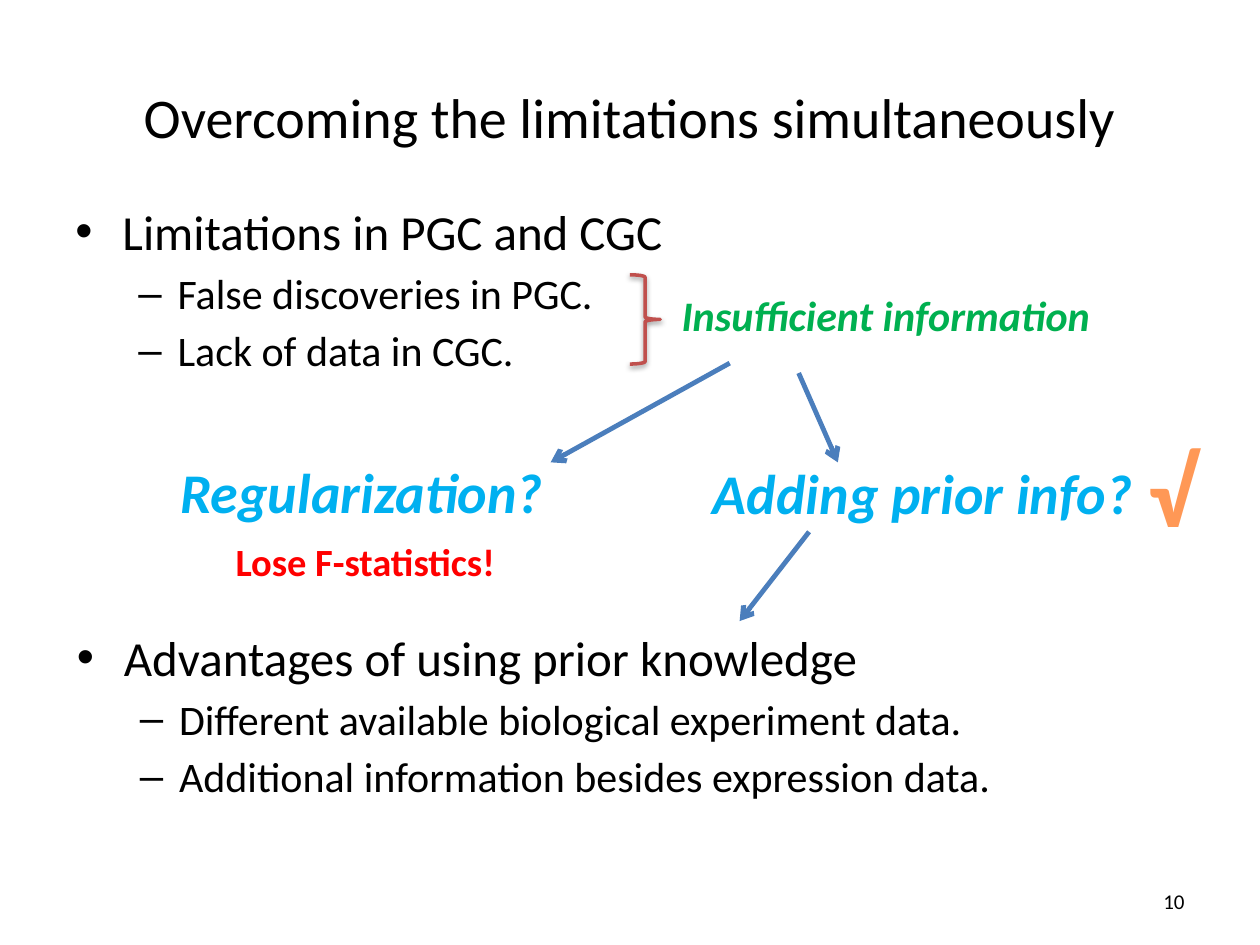
from dataclasses import dataclass

from lxml import etree
from pptx import Presentation
from pptx import util as u
from pptx.dml.color import RGBColor
from pptx.enum import shapes, text
from pptx.oxml import ns


@dataclass(frozen=True)
class Theme:
    font: str = "Calibri"
    black: str = "000000"
    green: str = "00B050"
    blue: str = "00B0F0"
    red: str = "FF0000"
    orange: str = "FF9856"
    brace: str = "C0504D"
    arrow: str = "4B7EBC"
    title: int = 32
    topic: int = 28
    point: int = 24
    warning: int = 22
    check: int = 56
    number: int = 12
    brace_width: float = 2
    arrow_width: float = 2.75


THEME = Theme()

# Boxes are left, top, width, height in centimetres.
TITLE = ("Overcoming the limitations simultaneously", (1.27, 0.76, 22.86, 3.18))
PAGE_NUMBER = ("10", (18.21, 17.65, 5.92, 1.02))

OUTLINES = [
    ((1.27, 3.94, 22.83, 4.67), "Limitations in PGC and CGC",
     ["False discoveries in PGC.", "Lack of data in CGC."]),
    ((1.3, 12.52, 22.81, 4.6), "Advantages of using prior knowledge",
     ["Different available biological experiment data.",
      "Additional information besides expression data."]),
]

# Wording, box, size, colour, italic
CALLOUTS = [
    ("Insufficient information", (13.49, 5.72, 8.84, 1.27), THEME.point, THEME.green, True),
    ("Regularization?", (3.38, 9.09, 7.9, 1.63), THEME.title, THEME.blue, True),
    ("Adding prior info?", (14.12, 9.12, 9.04, 1.63), THEME.title, THEME.blue, True),
    ("√", (22.91, 8.53, 2.39, 2.64), THEME.check, THEME.orange, False),
    ("Lose F-statistics!", (4.5, 10.72, 5.97, 1.19), THEME.warning, THEME.red, False),
]

BRACE = (12.7, 5.54, 0.61, 1.8)

ARROWS = [
    ((14.71, 7.32), (11.1, 9.32)),
    ((16.1, 7.52), (16.89, 9.32)),
    ((16.31, 10.72), (14.91, 12.52)),
]

# Bullet, left margin, hanging indent, size, space before in points
LEVELS = [
    ("•", 0.95, 0.95, THEME.topic, 5),
    ("–", 2.06, 0.79, THEME.point, 4),
]


def lengths(values):
    return [u.Cm(value) for value in values]


def add_element(parent, tag, **attributes):
    return etree.SubElement(parent, ns.qn(tag), attributes)


def add_frame(slide, box, wrap=True, anchor=text.MSO_ANCHOR.TOP):
    frame = slide.shapes.add_textbox(*lengths(box)).text_frame
    frame.word_wrap = wrap
    frame.vertical_anchor = anchor
    return frame


def add_run(paragraph, wording, size, color=THEME.black, bold=False, italic=False):
    run = paragraph.add_run()
    run.text = wording
    run.font.name = THEME.font
    run.font.size = u.Pt(size)
    run.font.bold = bold
    run.font.italic = italic
    run.font.color.rgb = RGBColor.from_string(color)


def add_line_of_text(slide, wording, box, size, alignment):
    paragraph = add_frame(slide, box, anchor=text.MSO_ANCHOR.MIDDLE).paragraphs[0]
    paragraph.alignment = alignment
    add_run(paragraph, wording, size)


def add_outline(slide, box, topic, points):
    frame = add_frame(slide, box)
    for index, wording in enumerate([topic, *points]):
        level = min(index, 1)
        bullet, margin, hanging, size, space = LEVELS[level]
        paragraph = frame.add_paragraph() if index else frame.paragraphs[0]
        paragraph.level = level
        paragraph.space_before = u.Pt(space)
        properties = paragraph._p.get_or_add_pPr()
        properties.set("marL", str(u.Cm(margin)))
        properties.set("indent", str(-u.Cm(hanging)))
        add_element(properties, "a:buFont", typeface="Arial")
        add_element(properties, "a:buChar", char=bullet)
        add_run(paragraph, wording, size)


def add_brace(slide):
    brace = slide.shapes.add_shape(shapes.MSO_SHAPE.RIGHT_BRACE, *lengths(BRACE))
    brace.fill.background()
    brace.line.color.rgb = RGBColor.from_string(THEME.brace)
    brace.line.width = u.Pt(THEME.brace_width)
    brace.shadow.inherit = False
    effects = brace._element.spPr.find(ns.qn("a:effectLst"))
    shadow = add_element(effects, "a:outerShdw", blurRad=str(u.Pt(3.1)),
                         dist=str(u.Pt(1.6)), dir="5400000", rotWithShape="0")
    color = add_element(shadow, "a:srgbClr", val=THEME.black)
    add_element(color, "a:alpha", val="38000")


def add_arrow(slide, start, end):
    arrow = slide.shapes.add_connector(
        shapes.MSO_CONNECTOR.STRAIGHT, *lengths(start + end))
    arrow.line.color.rgb = RGBColor.from_string(THEME.arrow)
    arrow.line.width = u.Pt(THEME.arrow_width)
    add_element(arrow.line._get_or_add_ln(), "a:tailEnd", type="arrow")
    add_element(arrow._element.spPr, "a:effectLst")


def main():
    presentation = Presentation()
    presentation.slide_width, presentation.slide_height = lengths((25.4, 19.05))
    slide = presentation.slides.add_slide(presentation.slide_layouts[6])

    add_line_of_text(slide, *TITLE, THEME.title, text.PP_ALIGN.CENTER)
    for outline in OUTLINES:
        add_outline(slide, *outline)
    add_brace(slide)
    for wording, box, size, color, italic in CALLOUTS:
        paragraph = add_frame(slide, box, wrap=False).paragraphs[0]
        add_run(paragraph, wording, size, color, bold=True, italic=italic)
    for start, end in ARROWS:
        add_arrow(slide, start, end)
    add_line_of_text(slide, *PAGE_NUMBER, THEME.number, text.PP_ALIGN.RIGHT)

    presentation.save("out.pptx")


if __name__ == "__main__":
    main()
